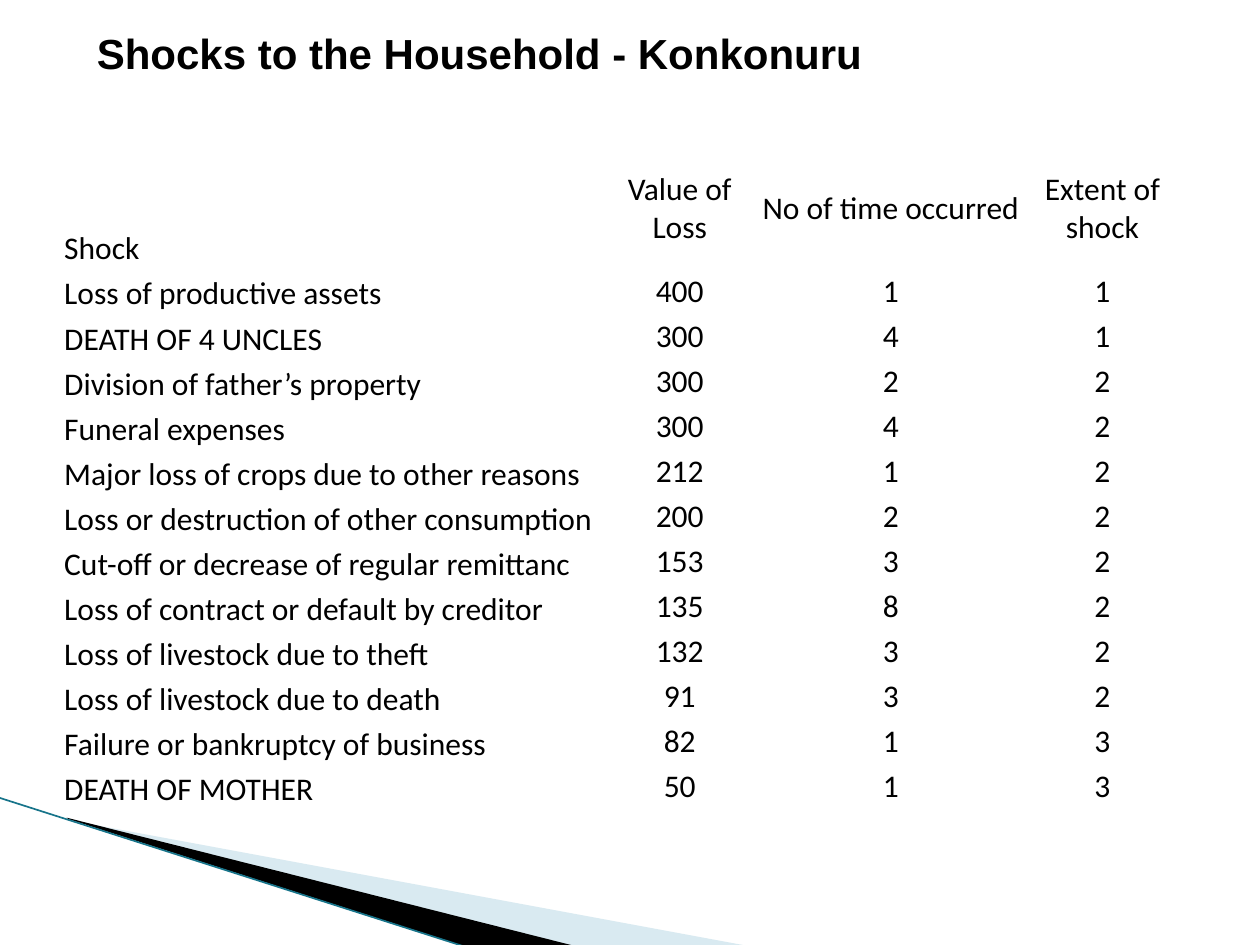
from lxml.etree import SubElement
from pptx import Presentation
from pptx.dml.color import RGBColor
from pptx.enum.shapes import MSO_CONNECTOR
from pptx.enum.text import MSO_ANCHOR, PP_ALIGN
from pptx.oxml.ns import qn
from pptx.util import Inches, Pt

TITLE = "Shocks to the Household - Konkonuru"
ROWS = [
    ("Shock", "Value of Loss", "No of time occurred", "Extent of shock"),
    ("Loss of productive assets", 400, 1, 1),
    ("DEATH OF 4 UNCLES", 300, 4, 1),
    ("Division of father’s property", 300, 2, 2),
    ("Funeral expenses", 300, 4, 2),
    ("Major loss of crops due to other reasons", 212, 1, 2),
    ("Loss or destruction of other consumption", 200, 2, 2),
    ("Cut-off or decrease of regular remittanc", 153, 3, 2),
    ("Loss of contract or default by creditor", 135, 8, 2),
    ("Loss of livestock due to theft", 132, 3, 2),
    ("Loss of livestock due to death", 91, 3, 2),
    ("Failure or bankruptcy of business", 82, 1, 3),
    ("DEATH OF MOTHER", 50, 1, 3),
]
COLS = (4.28, 1.23, 2.12, 1.24)
HIGH, HEAD = 5.25, 0.96
PLAIN = "{2D5ABB26-0587-4C30-8999-92F81FD0307C}"
WEDGES = [
    ("A0CBDC", 40, [(0.55, 6.51), (5.95, 7.51), (4.56, 7.51), (0.55, 6.5)]),
    ("000000", 100, [(0.53, 6.49), (4.57, 7.51), (3.72, 7.52), (0.54, 6.5)]),
]
EDGE = [(-0.01, 6.33), (3.71, 7.52)]


def paint(color):
    """Turn a hex string into a colour."""
    return RGBColor.from_string(color)


def write(frame, text, font="Calibri", size=18, bold=False, align=PP_ALIGN.LEFT):
    """Put one formatted paragraph into a text frame."""
    frame.word_wrap = True
    para = frame.paragraphs[0]
    para.alignment = align
    run = para.add_run()
    run.text = text
    run.font.name, run.font.size, run.font.bold = font, Pt(size), bold
    run.font.color.rgb = paint("000000")


def wedge(slide, color, alpha, points):
    """Draw a filled outline with the given opacity in percent."""
    first, *rest = [(Inches(x), Inches(y)) for x, y in points]
    pen = slide.shapes.build_freeform(*first)
    pen.add_line_segments(rest, close=True)
    shape = pen.convert_to_shape()
    shape.shadow.inherit = False
    shape.line.fill.background()
    shape.fill.solid()
    shape.fill.fore_color.rgb = paint(color)
    if alpha < 100:
        tone = shape._element.spPr.find(".//" + qn("a:srgbClr"))
        SubElement(tone, qn("a:alpha"), val=str(alpha * 1000))


def edge(slide):
    """Draw the thin line along the wedges."""
    ends = [Inches(v) for point in EDGE for v in point]
    line = slide.shapes.add_connector(MSO_CONNECTOR.STRAIGHT, *ends)
    line.line.color.rgb = paint("17748A")
    line.line.width = Pt(0.95)
    SubElement(line._element.spPr, qn("a:effectLst"))


def grid(slide):
    """Build the table of shocks."""
    box = [Inches(v) for v in (0.5, 1.17, sum(COLS), HIGH)]
    table = slide.shapes.add_table(len(ROWS), len(COLS), *box).table
    table.first_row = table.horz_banding = False
    table._tbl.tblPr.find(qn("a:tableStyleId")).text = PLAIN
    for col, width in zip(table.columns, COLS):
        col.width = Inches(width)
    step = (HIGH - HEAD) / (len(ROWS) - 1)
    for r, row in enumerate(ROWS):
        table.rows[r].height = Inches(step if r else HEAD)
        for c, value in enumerate(row):
            cell = table.cell(r, c)
            cell.fill.background()
            cell.margin_left = cell.margin_right = cell.margin_top = Inches(0.01)
            cell.margin_bottom = 0
            cell.vertical_anchor = MSO_ANCHOR.MIDDLE if c else MSO_ANCHOR.BOTTOM
            write(cell.text_frame, str(value),
                  align=PP_ALIGN.CENTER if c else PP_ALIGN.LEFT)


def main():
    """Build and save the slide."""
    deck = Presentation()
    deck.slide_width, deck.slide_height = Inches(10), Inches(7.5)
    slide = deck.slides.add_slide(deck.slide_layouts[6])
    for item in WEDGES:
        wedge(slide, *item)
    edge(slide)
    box = slide.shapes.add_textbox(*[Inches(v) for v in (0.67, 0.17, 8.92, 0.5)])
    box.text_frame.vertical_anchor = MSO_ANCHOR.MIDDLE
    write(box.text_frame, TITLE, font="Arial", size=24, bold=True)
    grid(slide)
    deck.save("out.pptx")


if __name__ == "__main__":
    main()
